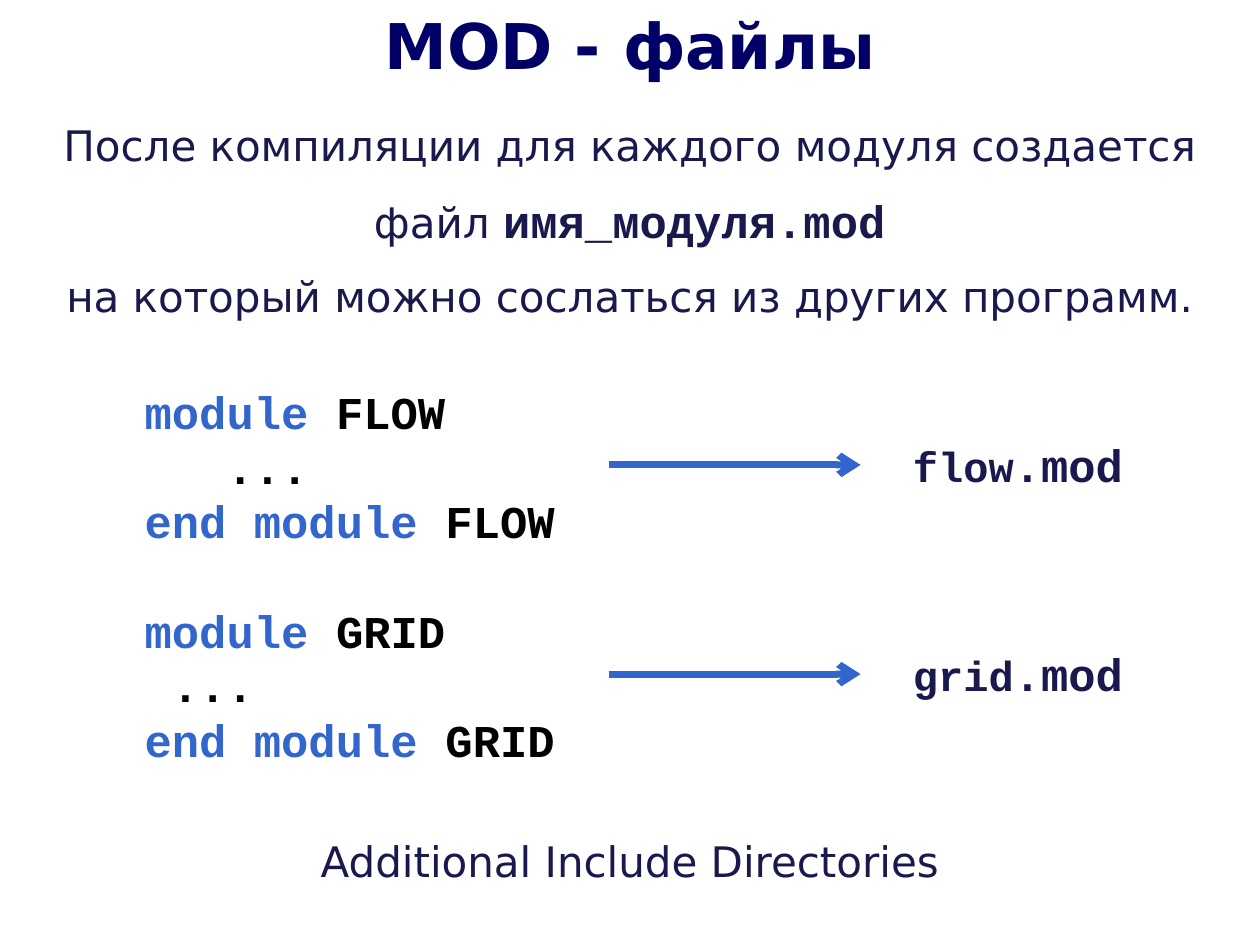
from pptx import Presentation
from pptx.dml.color import RGBColor
from pptx.enum.shapes import MSO_CONNECTOR
from pptx.enum.text import MSO_ANCHOR, MSO_AUTO_SIZE, PP_ALIGN
from pptx.oxml.ns import qn
from pptx.util import Inches, Pt
from lxml.etree import SubElement

NAVY = RGBColor(0x00, 0x00, 0x66)
INK = RGBColor(0x19, 0x19, 0x4D)
BLUE = RGBColor(0x33, 0x66, 0xCC)
BLACK = RGBColor(0x00, 0x00, 0x00)
SANS = "DejaVu Sans"
MONO = "Courier New"


def set_frame(shape, left, top, width, height):
    """Place a text shape and return its frame, wrapped and anchored at the top."""
    shape.left, shape.top = Inches(left), Inches(top)
    shape.width, shape.height = Inches(width), Inches(height)
    frame = shape.text_frame
    frame.word_wrap = True
    frame.auto_size = MSO_AUTO_SIZE.SHAPE_TO_FIT_TEXT
    frame.vertical_anchor = MSO_ANCHOR.TOP
    return frame


def add_box(slide, left, top, width, height):
    """Add a text box and return its frame."""
    size = [Inches(n) for n in (left, top, width, height)]
    return set_frame(slide.shapes.add_textbox(*size), left, top, width, height)


def add_line(frame, runs, align=PP_ALIGN.CENTER, before=0, indent=0, pitch=None):
    """Write one unbulleted paragraph from (text, font, size, color, bold) runs."""
    para = frame.paragraphs[0]
    if para.runs:
        para = frame.add_paragraph()
    props = para._p.get_or_add_pPr()
    props.set("marL", str(Inches(indent)))
    props.set("indent", "0")
    SubElement(props, qn("a:buNone"))
    para.alignment = align
    para.space_before = Pt(before)
    if pitch:
        para.line_spacing = Pt(pitch)
    for text, name, size, color, bold in runs:
        run = para.add_run()
        run.text = text
        font = run.font
        font.name, font.size, font.bold = name, Pt(size), bold
        font.color.rgb = color


def add_code(frame, name, dots, before):
    """Write the three code lines of one module."""
    rows = (("module ", name), (dots, ""), ("end module ", name))
    for row, (key, label) in enumerate(rows):
        tint = BLUE if label else BLACK
        runs = [(key, MONO, 26, tint, True)]
        if label:
            runs.append((label, MONO, 26, BLACK, True))
        add_line(frame, runs, PP_ALIGN.LEFT, 0 if row else before, 0.39, 31.2)


def add_arrow(slide, left, right, top):
    """Draw a level arrow pointing right."""
    line = slide.shapes.add_connector(
        MSO_CONNECTOR.STRAIGHT, Inches(left), Inches(top), Inches(right), Inches(top))
    line.line.color.rgb = BLUE
    line.line.width = Pt(4)
    SubElement(line.line._get_or_add_ln(), qn("a:tailEnd"), type="arrow")
    SubElement(line._element.spPr, qn("a:effectLst"))


def main():
    """Build the slide and save it."""
    deck = Presentation()
    deck.slide_width, deck.slide_height = Inches(10), Inches(7.5)
    slide = deck.slides.add_slide(deck.slide_layouts[1])

    title = set_frame(slide.shapes.title, 0, 0, 10, 0.7)
    add_line(title, [("MOD - файлы", SANS, 36, NAVY, True)])

    body = set_frame(slide.placeholders[1], 0, 0.9, 10, 1.68)
    add_line(body, [("После компиляции для каждого модуля создается", SANS, 24, INK, False)])
    add_line(body, [("файл ", SANS, 24, INK, False),
                    ("имя_модуля.mod", MONO, 26, INK, True)], before=13)
    add_line(body, [("на который можно сослаться из других программ.", SANS, 24, INK, False)],
             before=13)

    code = add_box(slide, 0.66, 3, 4.34, 3.16)
    add_code(code, "FLOW", "   ...", 0)
    add_code(code, "GRID", " ...", 31.2)

    for name, top in (("flow", 3.69), ("grid", 5.35)):
        add_arrow(slide, 4.83, 6.83, top)
        label = add_box(slide, 7.08, top - 0.27, 2, 0.54)
        add_line(label, [(name, MONO, 24, INK, True), (".mod", MONO, 26, INK, True)], pitch=31.2)

    foot = add_box(slide, 0, 6.58, 10, 0.5)
    add_line(foot, [("Additional Include Directories", SANS, 24, INK, False)])

    deck.save("out.pptx")


if __name__ == "__main__":
    main()
